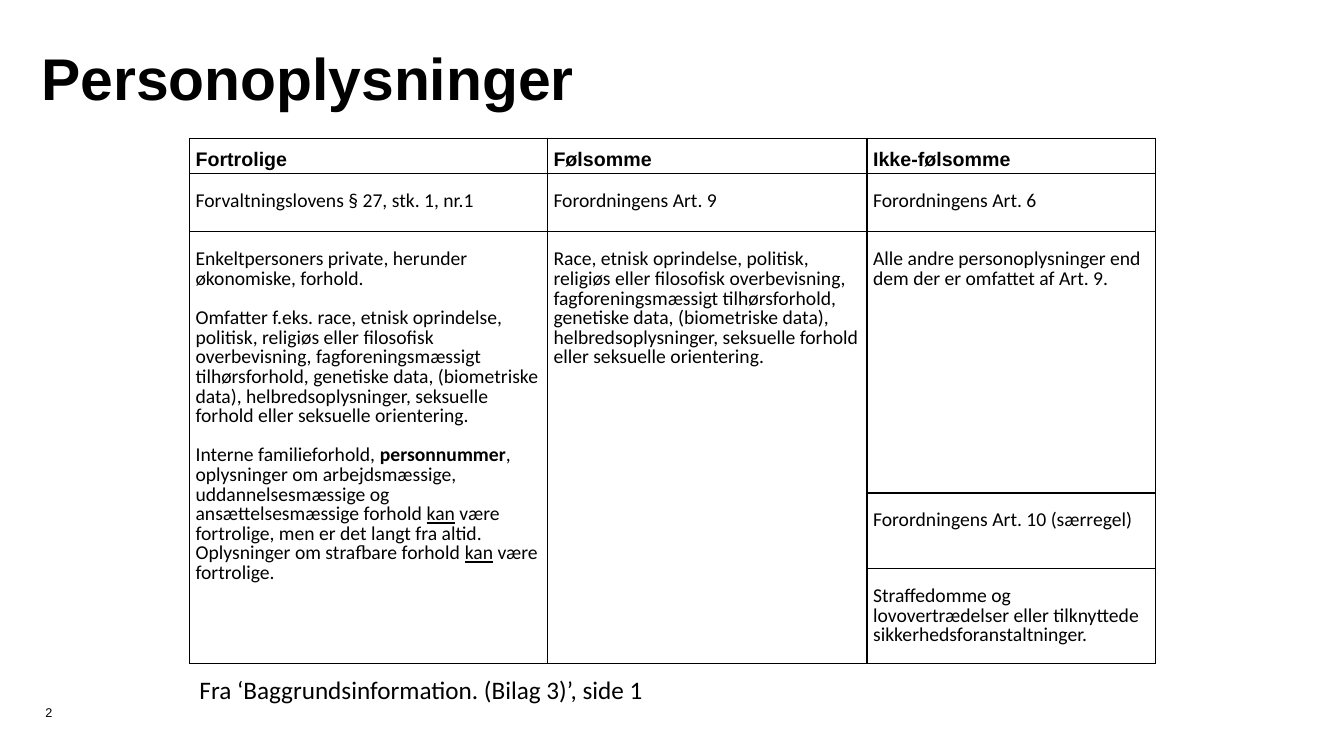
import pptx
import pptx.util
import pptx.dml.color
import pptx.enum.text
import pptx.oxml
import pptx.oxml.ns
from dataclasses import dataclass

TITLE = "Personoplysninger"
PAGE = "2"
SOURCE = "Fra ‘Baggrundsinformation. (Bilag 3)’, side 1"
HEADERS = ["Fortrolige", "Følsomme", "Ikke-følsomme"]
LAWS = ["Forvaltningslovens § 27, stk. 1, nr.1", "Forordningens Art. 9", "Forordningens Art. 6"]
SENSITIVE = (
    "ace, etnisk oprindelse, politisk, religiøs eller filosofisk overbevisning, "
    "fagforeningsmæssigt tilhørsforhold, genetiske data, (biometriske data), "
    "helbredsoplysninger, seksuelle forhold eller seksuelle orientering."
)
CONFIDENTIAL = [
    [("Enkeltpersoners private, herunder økonomiske, forhold.", "")],
    [("Omfatter f.eks. r" + SENSITIVE, "")],
    [
        ("Interne familieforhold, ", ""),
        ("personnummer", "bold"),
        (", oplysninger om arbejdsmæssige, uddannelsesmæssige og ansættelsesmæssige forhold ", ""),
        ("kan", "underline"),
        (" være fortrolige, men er det langt fra altid. Oplysninger om strafbare forhold ", ""),
        ("kan", "underline"),
        (" være fortrolige.", ""),
    ],
]
ORDINARY = [
    "Alle andre personoplysninger end dem der er omfattet af Art. 9.",
    "Forordningens Art. 10 (særregel)",
    "Straffedomme og lovovertrædelser eller tilknyttede sikkerhedsforanstaltninger.",
]
FIRST_BODY_ROW = 2
LAST_ROW = 4

PX = 9144
SLIDE = (1333, 750)
TITLE_BOX = (41, 50, 1248, 137)
PAGE_BOX = (45, 699, 47, 20)
SOURCE_BOX = (188, 664, 931, 71)
TABLE_AT = (188, 137)
COLS = [355, 317, 286]
ROWS = [33, 58, 259, 75, 94]
CELL_SIDE = 6


@dataclass(frozen=True)
class Theme:
    ink: str = "000000"
    head_font: str = "Arial"
    body_font: str = "Calibri"
    title: int = 42
    source: int = 18
    cell: int = 14
    page: int = 9
    border: int = 1


theme = Theme()
Pt = pptx.util.Pt


def px(*values):
    return [pptx.util.Emu(v * PX) for v in values]


def style(r, font, size, bold=False):
    r.font.name = font
    r.font.size = Pt(size)
    r.font.bold = bold
    r.font.color.rgb = pptx.dml.color.RGBColor.from_string(theme.ink)


def write(tf, paragraphs, font, size, bold=False, spacing=None, gap=0):
    for i, parts in enumerate(paragraphs):
        p = tf.paragraphs[0] if i == 0 else tf.add_paragraph()
        p.alignment = pptx.enum.text.PP_ALIGN.LEFT
        if spacing:
            p.line_spacing = spacing
        if i:
            p.space_before = Pt(gap)
        for text, mark in parts:
            r = p.add_run()
            r.text = text
            style(r, font, size, bold or mark == "bold")
            if mark == "underline":
                r.font.underline = True


def flush(tf):
    tf.margin_left = tf.margin_right = tf.margin_top = tf.margin_bottom = 0
    tf.vertical_anchor = pptx.enum.text.MSO_ANCHOR.TOP


def add_text(s, box, text, font, size):
    tf = s.shapes.add_textbox(*px(*box)).text_frame
    tf.word_wrap = True
    write(tf, [[(text, "")]], font, size)
    return tf


def outline(cell):
    cell.fill.background()
    tc_pr = cell._tc.get_or_add_tcPr()
    for i, side in enumerate("LRTB"):
        tc_pr.insert(i, pptx.oxml.parse_xml(
            f'<a:ln{side} {pptx.oxml.ns.nsdecls("a")} w="{Pt(theme.border)}"><a:solidFill>'
            f'<a:srgbClr val="{theme.ink}"/></a:solidFill></a:ln{side}>'
        ))


def fill_body(cell, paragraphs):
    cell.margin_top = Pt(theme.cell)
    write(cell.text_frame, paragraphs, theme.body_font, theme.cell,
          spacing=Pt(theme.cell), gap=theme.cell)


def add_table(s):
    frame = s.shapes.add_table(len(ROWS), len(COLS), *px(*TABLE_AT, sum(COLS), sum(ROWS)))
    table = frame.table
    table.first_row = table.horz_banding = False
    for col, width in zip(table.columns, px(*COLS)):
        col.width = width
    for row, height in zip(table.rows, px(*ROWS)):
        row.height = height
    for cell in table.iter_cells():
        cell.margin_left, cell.margin_right = px(CELL_SIDE, CELL_SIDE)
        cell.margin_top = cell.margin_bottom = 0
        outline(cell)
    for c, (header, law) in enumerate(zip(HEADERS, LAWS)):
        write(table.cell(0, c).text_frame, [[(header, "")]], theme.head_font, theme.cell,
              bold=True, spacing=1.5)
        fill_body(table.cell(1, c), [[(law, "")]])
    for c, paragraphs in enumerate([CONFIDENTIAL, [[("R" + SENSITIVE, "")]]]):
        cell = table.cell(FIRST_BODY_ROW, c)
        cell.merge(table.cell(LAST_ROW, c))
        fill_body(cell, paragraphs)
    for i, text in enumerate(ORDINARY):
        fill_body(table.cell(FIRST_BODY_ROW + i, 2), [[(text, "")]])


def main():
    prs = pptx.Presentation()
    prs.slide_width, prs.slide_height = px(*SLIDE)
    s = prs.slides.add_slide(prs.slide_layouts[5])

    title = s.shapes.title
    title.left, title.top, title.width, title.height = px(*TITLE_BOX)
    tf = title.text_frame
    flush(tf)
    tf.auto_size = pptx.enum.text.MSO_AUTO_SIZE.NONE
    write(tf, [[(TITLE, "")]], theme.head_font, theme.title, bold=True, spacing=0.89)

    flush(add_text(s, PAGE_BOX, PAGE, theme.head_font, theme.page))
    add_table(s)
    add_text(s, SOURCE_BOX, SOURCE, theme.body_font, theme.source)
    prs.save("out.pptx")


if __name__ == "__main__":
    main()
